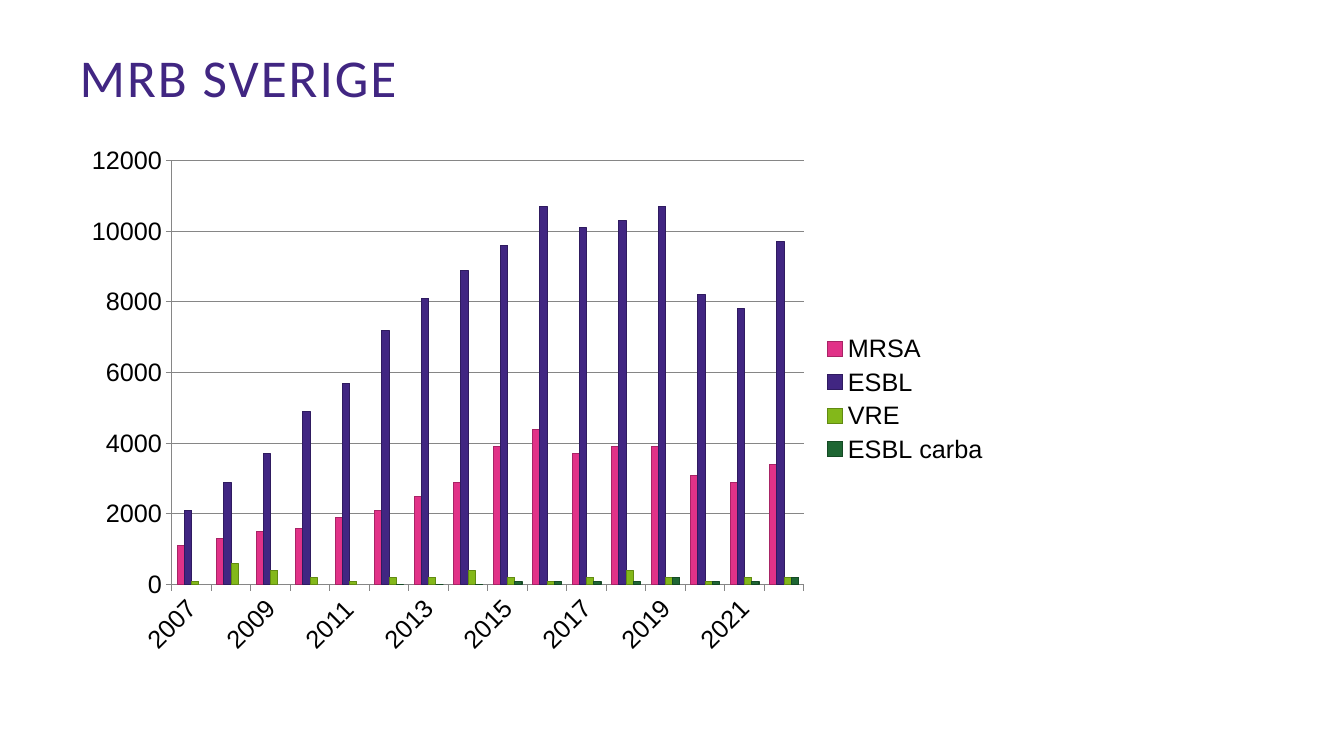
from dataclasses import dataclass
from typing import Optional

from pptx import Presentation
from pptx.chart.data import CategoryChartData
from pptx.dml.color import RGBColor
from pptx.enum.chart import XL_CHART_TYPE as ChartType
from pptx.enum.chart import XL_LEGEND_POSITION as LegendPosition
from pptx.enum.chart import XL_TICK_MARK as TickMark
from pptx.enum.text import MSO_ANCHOR as Anchor
from pptx.enum.text import PP_ALIGN as Align
from pptx.oxml import parse_xml
from pptx.oxml.ns import nsdecls, qn
from pptx.util import Inches, Pt

SLIDE_WIDTH, SLIDE_HEIGHT = Inches(13.33), Inches(7.5)
PURPLE, BLACK, GREY = "412682", "000000", "868686"
YEARS = [str(year) for year in range(2007, 2023)]


@dataclass
class Area:
    """A rectangle in inches."""
    left: float
    top: float
    width: float
    height: float

    def lengths(self) -> tuple:
        return tuple(Inches(n) for n in (self.left, self.top, self.width, self.height))


@dataclass
class Bacteria:
    name: str
    color: str
    outline: str
    cases: list[Optional[int]]


TITLE_AREA = Area(0.69, 0.26, 6.52, 0.86)
CHART_AREA = Area(0.69, 1.33, 9.22, 5.26)
PLOT_SHARES = {"x": 0.11, "y": 0.05, "w": 0.68, "h": 0.8}

BACTERIA = [
    Bacteria("MRSA", "E13288", "A82466", [
        1100, 1300, 1500, 1600, 1900, 2100, 2500, 2900,
        3900, 4400, 3700, 3900, 3900, 3100, 2900, 3400]),
    Bacteria("ESBL", PURPLE, "2F1B60", [
        2100, 2900, 3700, 4900, 5700, 7200, 8100, 8900,
        9600, 10700, 10100, 10300, 10700, 8200, 7800, 9700]),
    Bacteria("VRE", "83B81A", "618A12", [
        100, 600, 400, 200, 100, 200, 200, 400,
        200, 100, 200, 400, 200, 100, 200, 200]),
    Bacteria("ESBL carba", "1E6633", "154A25", [
        None, None, None, None, None, 0, 0, 0,
        100, 100, 100, 100, 200, 100, 100, 200]),
]


def rgb(color: str) -> RGBColor:
    return RGBColor.from_string(color)


def set_font(font, name: str, size: float, color: str) -> None:
    font.name, font.size, font.bold = name, Pt(size), False
    font.color.rgb = rgb(color)


def set_line(line, color: str) -> None:
    line.color.rgb = rgb(color)
    line.width = Pt(0.75)


def write_title(title, text: str) -> None:
    title.left, title.top, title.width, title.height = TITLE_AREA.lengths()
    frame = title.text_frame
    frame.text = text
    frame.word_wrap = True
    frame.vertical_anchor = Anchor.BOTTOM
    paragraph = frame.paragraphs[0]
    paragraph.alignment = Align.LEFT
    run = paragraph.runs[0]
    set_font(run.font, "Calibri", 38, PURPLE)
    run.font._element.set("spc", "140")


def place_plot(chart) -> None:
    """Fix the inner plot area as shares of the chart."""
    plot_area = chart._chartSpace.chart.plotArea
    for layout in plot_area.findall(qn("c:layout")):
        plot_area.remove(layout)
    shares = "".join(f'<c:{key} val="{share}"/>' for key, share in PLOT_SHARES.items())
    plot_area.insert(0, parse_xml(
        f'<c:layout {nsdecls("c")}><c:manualLayout><c:layoutTarget val="inner"/>'
        f'<c:xMode val="edge"/><c:yMode val="edge"/>{shares}'
        '</c:manualLayout></c:layout>'))


def style_axes(chart) -> None:
    years, cases = chart.category_axis, chart.value_axis
    for axis in (years, cases):
        axis.major_tick_mark = TickMark.OUTSIDE
        axis.minor_tick_mark = TickMark.NONE
        set_line(axis.format.line, GREY)
        set_font(axis.tick_labels.font, "Arial", 18, BLACK)
    cases.minimum_scale, cases.maximum_scale, cases.major_unit = 0, 12000, 2000
    cases.has_major_gridlines = True
    set_line(cases.major_gridlines.format.line, GREY)
    years_xml = years._element
    years_xml.find(qn("c:txPr")).find(qn("a:bodyPr")).set("rot", "-2700000")
    years_xml.find(qn("c:noMultiLvlLbl")).addprevious(
        parse_xml(f'<c:tickLblSkip {nsdecls("c")} val="2"/>'))


def add_cases_chart(slide) -> None:
    data = CategoryChartData(number_format="General")
    data.categories = YEARS
    for bacteria in BACTERIA:
        data.add_series(bacteria.name, bacteria.cases)
    chart = slide.shapes.add_chart(
        ChartType.COLUMN_CLUSTERED, *CHART_AREA.lengths(), data).chart
    chart.has_title = False
    set_font(chart.font, "Arial", 18, BLACK)
    chart.has_legend = True
    chart.legend.position = LegendPosition.RIGHT
    chart.legend.include_in_layout = False
    set_font(chart.legend.font, "Arial", 18, BLACK)
    plot = chart.plots[0]
    plot.gap_width, plot.overlap, plot.vary_by_categories = 150, 0, False
    for series, bacteria in zip(plot.series, BACTERIA):
        series.invert_if_negative = False
        series.format.fill.solid()
        series.format.fill.fore_color.rgb = rgb(bacteria.color)
        set_line(series.format.line, bacteria.outline)
    style_axes(chart)
    place_plot(chart)


def main() -> None:
    presentation = Presentation()
    presentation.slide_width, presentation.slide_height = SLIDE_WIDTH, SLIDE_HEIGHT
    title_only = presentation.slide_layouts.get_by_name("Title Only")
    slide = presentation.slides.add_slide(title_only)
    write_title(slide.shapes.title, "MRB SVERIGE")
    add_cases_chart(slide)
    presentation.save("out.pptx")


if __name__ == "__main__":
    main()
